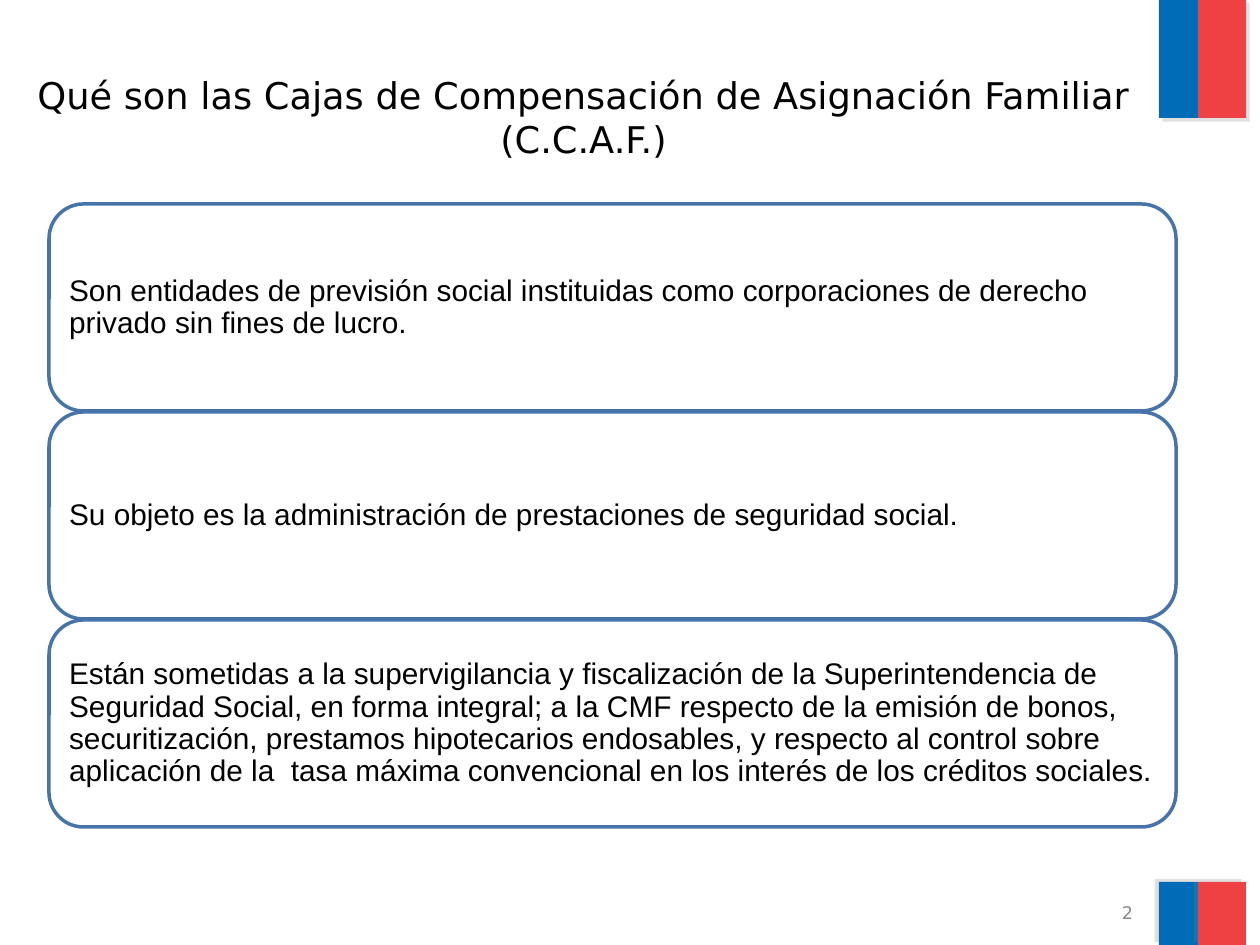
from dataclasses import dataclass

from lxml import etree
from pptx import Presentation
from pptx import util as u
from pptx.dml.color import RGBColor
from pptx.enum import shapes, text
from pptx.oxml.ns import qn

PX = 914400 / 126


@dataclass(frozen=True)
class Theme:
    blue: str = "006CB7"
    red: str = "EF4144"
    shadow: str = "808080"
    outline: str = "4674AA"
    paper: str = "FFFFFF"
    ink: str = "000000"
    muted: str = "898989"
    heading_font: str = "DejaVu Sans"
    body_font: str = "Arial"
    title_size: int = 21
    body_size: int = 17
    number_size: int = 10


theme = Theme()


def box(left, top, width, height):
    """Turn px into the EMU lengths of a shape."""
    return [u.Emu(round(n * PX)) for n in (left, top, width, height)]


def write(shape, wording, *, font, size, color, align, anchor, margins, spacing=1.0):
    """Fill a shape with one paragraph; margins are left, top, right, bottom in px."""
    frame = shape.text_frame
    frame.word_wrap = True
    frame.auto_size = text.MSO_AUTO_SIZE.NONE
    frame.vertical_anchor = anchor
    (frame.margin_left, frame.margin_top,
     frame.margin_right, frame.margin_bottom) = box(*margins)
    paragraph = frame.paragraphs[0]
    paragraph.alignment = align
    paragraph.line_spacing = spacing
    run = paragraph.add_run()
    run.text = wording
    run.font.name = font
    run.font.size = u.Pt(size)
    run.font.color.rgb = RGBColor.from_string(color)


deck = Presentation()
deck.slide_width, deck.slide_height = u.Inches(10), u.Inches(7.5)
slide = deck.slides.add_slide(deck.slide_layouts[5])

# Two-colour stripes in the right-hand corners, with opposite shadows
for top, height, shadow_angle in ((-1, 119, 45), (882, 63, 215)):
    for left, width, color in ((1159, 39, theme.blue), (1198, 48, theme.red)):
        stripe = slide.shapes.add_shape(
            shapes.MSO_SHAPE.RECTANGLE, *box(left, top, width, height))
        stripe.fill.solid()
        stripe.fill.fore_color.rgb = RGBColor.from_string(color)
        stripe.line.fill.background()
        stripe.shadow.inherit = False
        effects = stripe._element.spPr.find(qn("a:effectLst"))
        shadow = etree.SubElement(
            effects, qn("a:outerShdw"), dist=str(u.Pt(3)),
            dir=str(shadow_angle * 60000), algn="ctr", rotWithShape="0")
        tint = etree.SubElement(shadow, qn("a:srgbClr"), val=theme.shadow)
        etree.SubElement(tint, qn("a:alpha"), val="24000")

title = slide.shapes.title
title.left, title.top, title.width, title.height = box(21, 21, 1125, 158)
write(title, "Qué son las Cajas de Compensación de Asignación Familiar (C.C.A.F.)",
      font=theme.heading_font, size=theme.title_size, color=theme.ink,
      align=text.PP_ALIGN.CENTER, anchor=text.MSO_ANCHOR.TOP,
      margins=(13, 52, 13, 6))

# Stacked statements
statements = (
    "Son entidades de previsión social instituidas como corporaciones de derecho "
    "privado sin fines de lucro.",
    "Su objeto es la administración de prestaciones de seguridad social.",
    "Están sometidas a la supervigilancia y fiscalización de la Superintendencia de "
    "Seguridad Social, en forma integral; a la CMF respecto de la emisión de bonos, "
    "securitización, prestamos hipotecarios endosables, y respecto al control sobre "
    "aplicación de la  tasa máxima convencional en los interés de los créditos sociales.",
)
for row, statement in enumerate(statements):
    panel = slide.shapes.add_shape(
        shapes.MSO_SHAPE.ROUNDED_RECTANGLE, *box(49, 204 + row * 208, 1127, 207))
    panel.shadow.inherit = False
    panel.fill.solid()
    panel.fill.fore_color.rgb = RGBColor.from_string(theme.paper)
    panel.line.color.rgb = RGBColor.from_string(theme.outline)
    panel.line.width = u.Pt(2)
    write(panel, statement, font=theme.body_font, size=theme.body_size,
          color=theme.ink, align=text.PP_ALIGN.LEFT, anchor=text.MSO_ANCHOR.MIDDLE,
          margins=(10, 10, 10, 10), spacing=0.9)

page_number = slide.shapes.add_textbox(*box(852, 900, 294, 26))
write(page_number, "2", font=theme.heading_font, size=theme.number_size,
      color=theme.muted, align=text.PP_ALIGN.RIGHT, anchor=text.MSO_ANCHOR.MIDDLE,
      margins=(13, 6, 13, 6))

deck.save("out.pptx")
